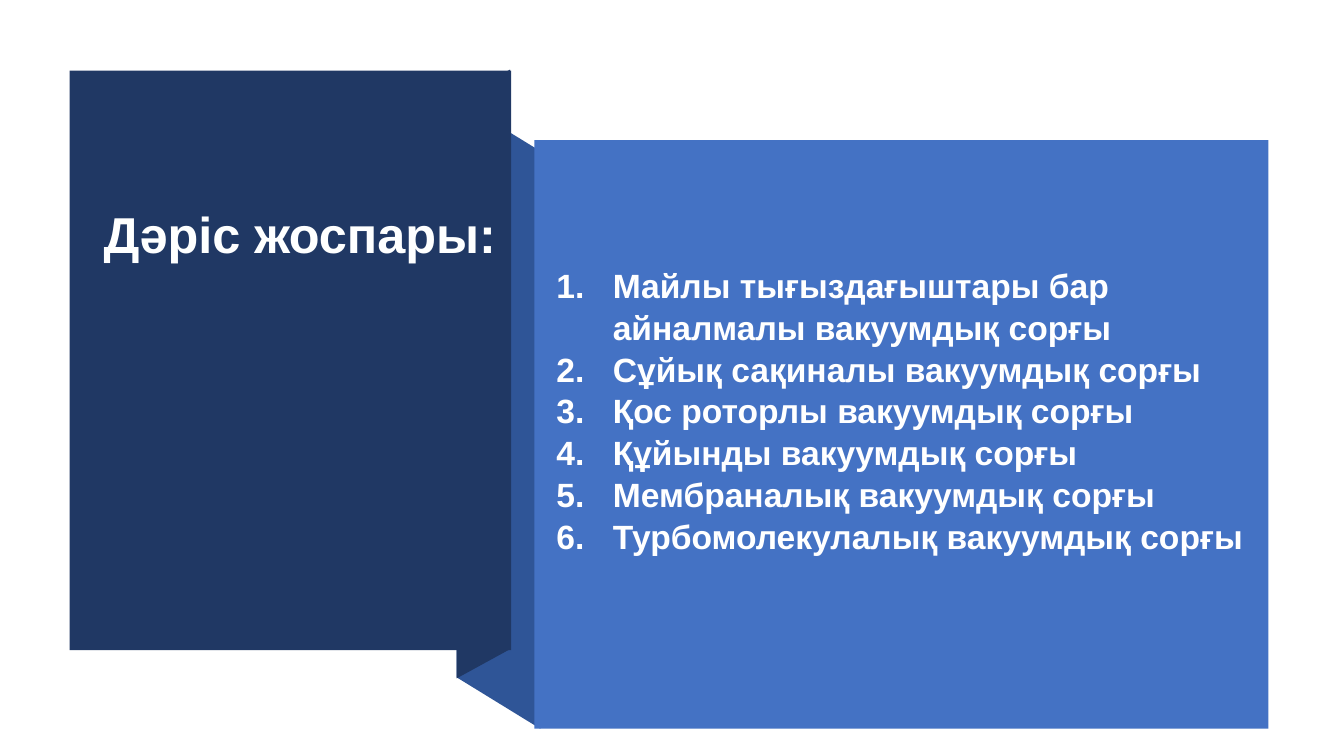
from pptx import Presentation
from pptx.dml.color import RGBColor
from pptx.enum.shapes import MSO_SHAPE as Shape
from pptx.oxml import parse_xml
from pptx.oxml.ns import nsdecls
from pptx.util import Inches, Pt

# Content
TITLE = "Дәріс жоспары:"
TOPICS = [
    "Майлы тығыздағыштары бар айналмалы вакуумдық сорғы",
    "Сұйық сақиналы вакуумдық сорғы",
    "Қос роторлы вакуумдық сорғы",
    "Құйынды вакуумдық сорғы",
    "Мембраналық вакуумдық сорғы",
    "Турбомолекулалық вакуумдық сорғы",
]
COLORS = {"navy": "203864", "fold": "2F5597", "panel": "4472C4",
          "title": "FEFFFF", "text": "FFFFFF"}

# Layout, in inches: fold outlines run clockwise from the top left
FOLDS = [
    ("fold", [(4.53, 0.99), (5.36, 1.5), (5.36, 7.23), (4.53, 6.72)]),
    ("navy", [(4.53, 0.98), (5.06, 0.69), (5.06, 6.44), (4.53, 6.73)]),
]
PANELS = [("navy", (0.69, 0.7, 4.38, 5.75)), ("panel", (5.3, 1.39, 7.28, 5.84))]
TITLE_AREA = (0.93, 1.97, 6.67, 0.7)
TOPICS_AREA = (5.42, 2.56, 7.04, 4.39)
NUMBER_INDENT = Inches(0.56)
TITLE_FONT = {"name": "Arial", "size": Pt(36), "bold": True}
TOPIC_FONT = {"name": "Arial", "size": Pt(24), "bold": True}


def paint(shape, color):
    shape.fill.solid()
    shape.fill.fore_color.rgb = RGBColor.from_string(COLORS[color])
    shape.line.fill.background()
    shape.shadow.inherit = False


def add_text(page, area, lines, font, color):
    box = page.shapes.add_textbox(*map(Inches, area))
    frame = box.text_frame
    frame.word_wrap = True
    for index, line in enumerate(lines):
        para = frame.add_paragraph() if index else frame.paragraphs[0]
        span = para.add_run()
        span.text = line
        for name, value in font.items():
            setattr(span.font, name, value)
        span.font.color.rgb = RGBColor.from_string(COLORS[color])
    return frame


def number(para):
    props = para._p.get_or_add_pPr()
    props.set("marL", str(NUMBER_INDENT))
    props.set("indent", str(-NUMBER_INDENT))
    for tag in (f'<a:buClr {nsdecls("a")}><a:srgbClr val="{COLORS["text"]}"/></a:buClr>',
                f'<a:buFont {nsdecls("a")} typeface="+mj-lt"/>',
                f'<a:buAutoNum {nsdecls("a")} type="arabicPeriod"/>'):
        props.append(parse_xml(tag))


deck = Presentation()
deck.slide_width, deck.slide_height = Inches(13.33), Inches(7.5)
page = deck.slides.add_slide(deck.slide_layouts[6])

# Folded ribbon
for color, points in FOLDS:
    corners = [(Inches(x), Inches(y)) for x, y in points]
    outline = page.shapes.build_freeform(*corners[0])
    outline.add_line_segments(corners[1:], close=True)
    paint(outline.convert_to_shape(), color)

# Title and topic panels
for color, area in PANELS:
    paint(page.shapes.add_shape(Shape.RECTANGLE, *map(Inches, area)), color)

# Numbered topics
for para in add_text(page, TOPICS_AREA, TOPICS, TOPIC_FONT, "text").paragraphs:
    para.line_spacing = 1.04
    number(para)

# Title
add_text(page, TITLE_AREA, [TITLE], TITLE_FONT, "title")

deck.save("out.pptx")
